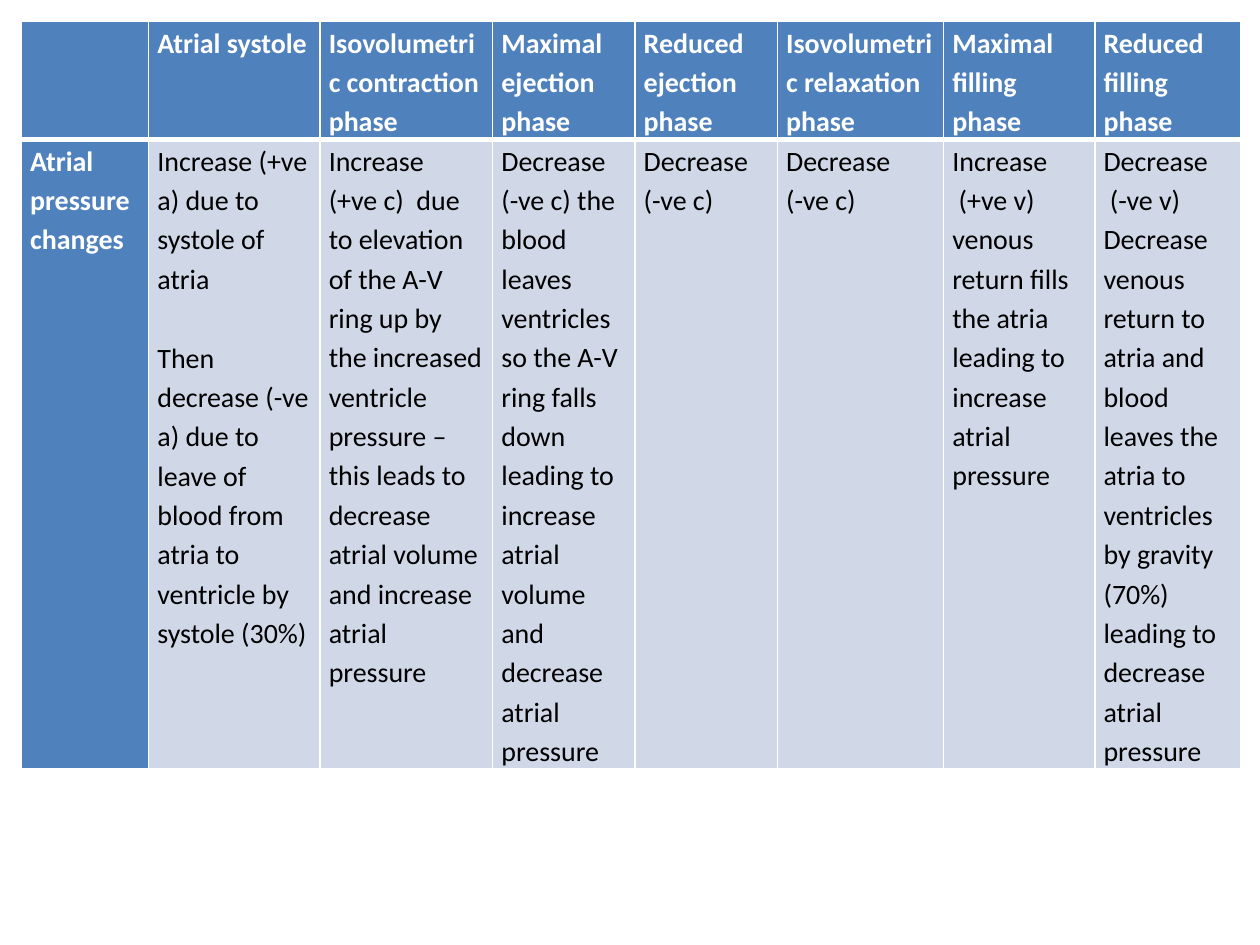
from lxml import etree
from pptx import Presentation
from pptx.dml.color import RGBColor
from pptx.enum.text import MSO_ANCHOR
from pptx.oxml.ns import qn
from pptx.util import Inches, Pt

TOP = MSO_ANCHOR.TOP
BLUE = RGBColor(0x4F, 0x81, 0xBD)
PALE = RGBColor(0xD0, 0xD8, 0xE8)
WHITE = RGBColor(0xFF, 0xFF, 0xFF)
BLACK = RGBColor(0x00, 0x00, 0x00)

COL_WIDTHS = [1.01, 1.36, 1.37, 1.13, 1.13, 1.32, 1.2, 1.16]
ROW_HEIGHTS = [0.89, 4.52]
HEADERS = [
    "",
    "Atrial systole",
    "Isovolumetric contraction phase",
    "Maximal ejection phase",
    "Reduced ejection phase",
    "Isovolumetric relaxation phase",
    "Maximal filling phase",
    "Reduced filling phase",
]
PRESSURE_CHANGES = [
    "Atrial pressure changes",
    "Increase (+ve a) due to systole of atria\n"
    "Then decrease (-ve a) due to leave of blood from atria to ventricle by systole (30%)",
    "Increase\n"
    "(+ve c)  due to elevation of the A-V ring up by the increased ventricle pressure –"
    "this leads to decrease atrial volume and increase atrial pressure",
    "Decrease (-ve c) the blood leaves ventricles so the A-V ring falls down "
    "leading to increase atrial volume and decrease atrial pressure",
    "Decrease (-ve c)",
    "Decrease\n(-ve c)",
    "Increase\n (+ve v) venous return fills the atria leading to increase atrial pressure",
    "Decrease\n (-ve v)\n"
    "Decrease venous return to atria and blood leaves the atria to ventricles "
    "by gravity (70%) leading to decrease atrial pressure",
]


def set_borders(cell, widths):
    tcPr = cell._tc.get_or_add_tcPr()
    for i, (side, width) in enumerate(widths.items()):
        ln = etree.Element(qn("a:" + side), w=str(Pt(width)))
        fill = etree.SubElement(ln, qn("a:solidFill"))
        etree.SubElement(fill, qn("a:srgbClr"), val=str(WHITE))
        tcPr.insert(i, ln)


prs = Presentation()
prs.slide_width = Inches(10)
prs.slide_height = Inches(7.5)
s = prs.slides.add_slide(prs.slide_layouts[6])

table = s.shapes.add_table(
    len(ROW_HEIGHTS), len(COL_WIDTHS), Inches(0.17), Inches(0.17),
    Inches(sum(COL_WIDTHS)), Inches(sum(ROW_HEIGHTS)),
).table
for col, width in zip(table.columns, COL_WIDTHS):
    col.width = Inches(width)
for row, height in zip(table.rows, ROW_HEIGHTS):
    row.height = Inches(height)

for r, texts in enumerate([HEADERS, PRESSURE_CHANGES]):
    for c, text in enumerate(texts):
        heading = r == 0 or c == 0
        cell = table.cell(r, c)
        cell.text = text
        cell.vertical_anchor = TOP
        cell.margin_left = cell.margin_right = Inches(0.07)
        cell.margin_top = cell.margin_bottom = 0
        cell.fill.solid()
        cell.fill.fore_color.rgb = BLUE if heading else PALE
        set_borders(cell, {"lnL": 1, "lnR": 1, "lnT": 3 if r else 1, "lnB": 1 if r else 3})
        for p in cell.text_frame.paragraphs:
            p.line_spacing = 1.15
            p.font.name = "Calibri"
            p.font.size = Pt(16)
            p.font.bold = heading
            p.font.color.rgb = WHITE if heading else BLACK

table.cell(1, 1).text_frame.paragraphs[1].space_before = Pt(22.5)

prs.save("out.pptx")
